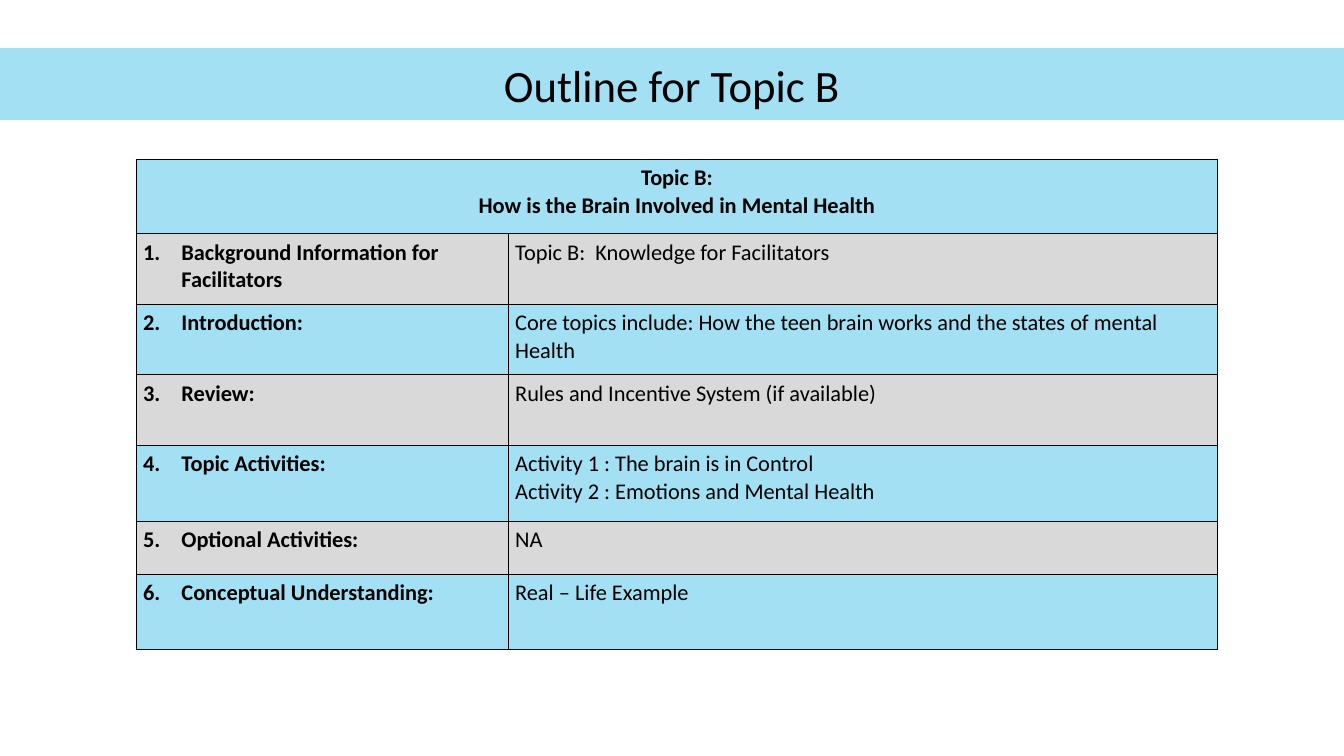
from lxml import etree
from pptx import Presentation
from pptx.dml.color import RGBColor
from pptx.enum.text import MSO_ANCHOR, MSO_AUTO_SIZE, PP_ALIGN
from pptx.oxml.ns import qn
from pptx.util import Inches, Pt

CENTER = PP_ALIGN.CENTER
LEFT = PP_ALIGN.LEFT
MIDDLE = MSO_ANCHOR.MIDDLE
NO_AUTOFIT = MSO_AUTO_SIZE.NONE

SKY = RGBColor(0xA3, 0xE0, 0xF4)
GRAY = RGBColor(0xD9, 0xD9, 0xD9)
BLACK = RGBColor(0, 0, 0)
FONT = "Calibri"
TITLE_ONLY = 5

COLUMN_WIDTHS = [3.69, 7.04]
ROW_HEIGHTS = [0.74, 0.7, 0.7, 0.7, 0.75, 0.53, 0.74]
HEADING = ["Topic B:", "How is the Brain Involved in Mental Health"]
OUTLINE = [
    ("Background Information for Facilitators", ["Topic B:  Knowledge for Facilitators"]),
    ("Introduction:", ["Core topics include: How the teen brain works and the states of mental Health"]),
    ("Review:", ["Rules and Incentive System (if available)"]),
    ("Topic Activities:", ["Activity 1 : The brain is in Control", "Activity 2 : Emotions and Mental Health"]),
    ("Optional Activities:", ["NA"]),
    ("Conceptual Understanding:", ["Real – Life Example"]),
]


def add_run(paragraph, text, size, bold=False):
    run = paragraph.add_run()
    run.text = text
    run.font.name = FONT
    run.font.size = Pt(size)
    run.font.bold = bold
    run.font.color.rgb = BLACK


def add_title(slide, text):
    title = slide.shapes.title
    title.left, title.top = Inches(0), Inches(0.48)
    title.width, title.height = Inches(13.33), Inches(0.71)
    outline = etree.SubElement(title.element.spPr, qn("a:prstGeom"), prst="roundRect")
    etree.SubElement(outline, qn("a:avLst"))
    title.fill.solid()
    title.fill.fore_color.rgb = SKY
    title.line.color.rgb = SKY
    title.line.width = Pt(0.75)
    frame = title.text_frame
    frame.auto_size = NO_AUTOFIT
    frame.word_wrap = True
    frame.vertical_anchor = MIDDLE
    frame.margin_left = frame.margin_right = Inches(0.07)
    frame.margin_top = frame.margin_bottom = Inches(0.07)
    paragraph = frame.paragraphs[0]
    paragraph.alignment = CENTER
    add_run(paragraph, text, 32)


def add_number(paragraph, number):
    properties = paragraph._p.get_or_add_pPr()
    properties.set("marL", str(Inches(0.38)))
    properties.set("indent", str(-Inches(0.38)))
    etree.SubElement(properties, qn("a:buFont"), typeface="+mj-lt")
    etree.SubElement(properties, qn("a:buAutoNum"), type="arabicPeriod", startAt=str(number))


def style_cell(cell, color):
    cell.margin_left = cell.margin_right = Inches(0.07)
    cell.margin_top = cell.margin_bottom = Inches(0.05)
    properties = cell._tc.get_or_add_tcPr()
    for side in ("lnL", "lnR", "lnT", "lnB"):
        border = etree.SubElement(properties, qn(f"a:{side}"), w=str(Pt(0.75)))
        border_fill = etree.SubElement(border, qn("a:solidFill"))
        etree.SubElement(border_fill, qn("a:srgbClr"), val=str(BLACK))
    cell.fill.solid()
    cell.fill.fore_color.rgb = color


def write_cell(cell, lines, bold=False, alignment=LEFT, number=None):
    frame = cell.text_frame
    for index, line in enumerate(lines):
        paragraph = frame.add_paragraph() if index else frame.paragraphs[0]
        paragraph.alignment = alignment
        if number:
            add_number(paragraph, number)
        add_run(paragraph, line, 16, bold)


def add_outline_table(slide):
    table = slide.shapes.add_table(
        len(ROW_HEIGHTS), len(COLUMN_WIDTHS), Inches(1.35), Inches(1.58),
        Inches(sum(COLUMN_WIDTHS)), Inches(sum(ROW_HEIGHTS))).table
    table.first_row = False
    table.horz_banding = False
    for column, width in zip(table.columns, COLUMN_WIDTHS):
        column.width = Inches(width)
    for index, (row, height) in enumerate(zip(table.rows, ROW_HEIGHTS)):
        row.height = Inches(height)
        for cell in row.cells:
            style_cell(cell, GRAY if index % 2 else SKY)

    heading = table.cell(0, 0)
    heading.merge(table.cell(0, 1))
    write_cell(heading, HEADING, bold=True, alignment=CENTER)
    for number, (section, details) in enumerate(OUTLINE, start=1):
        write_cell(table.cell(number, 0), [section], bold=True, number=number)
        write_cell(table.cell(number, 1), details)


def main():
    presentation = Presentation()
    presentation.slide_width = Inches(13.33)
    presentation.slide_height = Inches(7.5)
    slide = presentation.slides.add_slide(presentation.slide_layouts[TITLE_ONLY])
    add_title(slide, "Outline for Topic B")
    add_outline_table(slide)
    presentation.save("out.pptx")


if __name__ == "__main__":
    main()
